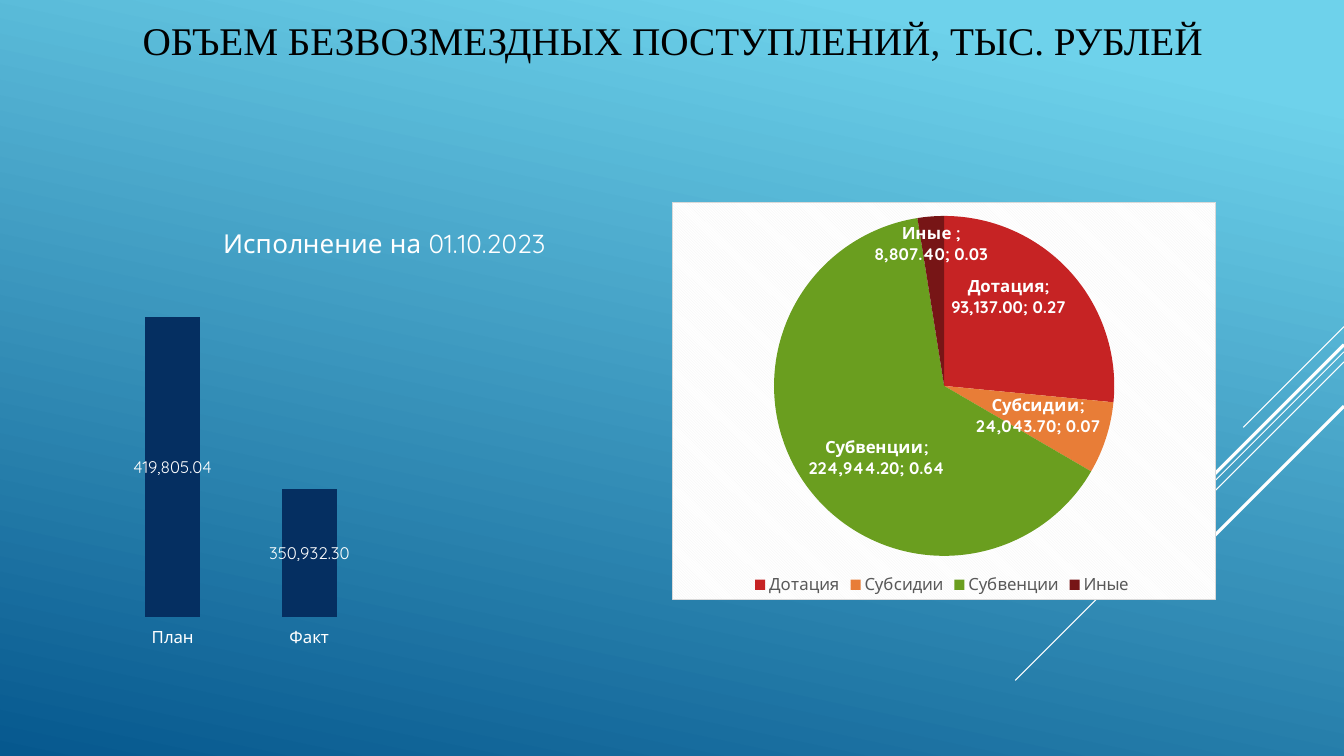
from dataclasses import dataclass

from pptx import Presentation
from pptx.chart.data import CategoryChartData
from pptx.dml.color import RGBColor
from pptx.enum.chart import XL_CHART_TYPE, XL_LABEL_POSITION, XL_LEGEND_POSITION, XL_TICK_MARK
from pptx.enum.shapes import MSO_CONNECTOR
from pptx.enum.text import MSO_ANCHOR, PP_ALIGN
from pptx.oxml import parse_xml
from pptx.oxml.ns import nsdecls, qn
from pptx.util import Inches, Pt

PIE, COLUMN = XL_CHART_TYPE.PIE, XL_CHART_TYPE.COLUMN_STACKED
INSIDE_END, LEGEND_BOTTOM = XL_LABEL_POSITION.INSIDE_END, XL_LEGEND_POSITION.BOTTOM
TICK_NONE, TICK_OUTSIDE = XL_TICK_MARK.NONE, XL_TICK_MARK.OUTSIDE
STRAIGHT, MIDDLE, CENTER = MSO_CONNECTOR.STRAIGHT, MSO_ANCHOR.MIDDLE, PP_ALIGN.CENTER


@dataclass(frozen=True)
class Theme:
    heading_font: str = "Times New Roman"
    body_font: str = "Quicksand"
    heading_size: float = 28
    chart_title_size: float = 18.6
    label_size: float = 12
    black: str = "000000"
    white: str = "FFFFFF"
    grey: str = "595959"
    border: str = "D9D9D9"
    hatch: str = "F2F2F2"
    sky: str = "6ED2EB"
    deep: str = "06588E"
    navy: str = "052F61"
    slices: tuple = ("C62324", "E87D37", "6A9E1F", "771516")


THEME = Theme()
WIDTH, HEIGHT = 13.33, 7.5
MARGIN, CHART_TOP = 0.92, 2
NUMBER_FORMAT = "#,##0.00"

# Diagonals start at the right edge: start height, length along x, width
DIAGONALS = ((3.24, 1, 0.75), (3.49, 3.26, 0.75), (3.59, 2.07, 0.75),
             (3.42, 1.91, 2.25), (4.03, 1.39, 2.25))


def style_font(font, size, color=THEME.white, name=THEME.body_font, bold=False):
    font.size, font.name, font.bold = Pt(size), name, bold
    font.color.rgb = RGBColor.from_string(color)


def paint_background(slide):
    fill = slide.background.fill
    fill.gradient()
    fill.gradient_angle = 360 - 102
    stops = zip(fill.gradient_stops, (THEME.sky, THEME.deep), (0.1, 1))
    for stop, color, position in stops:
        stop.color.rgb = RGBColor.from_string(color)
        stop.position = position


def add_diagonal(slide, top, length, width):
    line = slide.shapes.add_connector(
        STRAIGHT, Inches(WIDTH), Inches(top), Inches(WIDTH - length), Inches(top + length))
    line.line.color.rgb = RGBColor.from_string(THEME.white)
    line.line.width = Pt(width)
    line._element.spPr.append(parse_xml(f"<a:effectLst {nsdecls('a')}/>"))


def set_title(slide, text):
    title = slide.shapes.title
    title.left, title.top = Inches(MARGIN), Inches(-0.15)
    title.width, title.height = Inches(11.5), Inches(1.09)
    title.text_frame.vertical_anchor = MIDDLE
    paragraph = title.text_frame.paragraphs[0]
    paragraph.alignment = CENTER
    run = paragraph.add_run()
    run.text = text
    style_font(run.font, THEME.heading_size, THEME.black, THEME.heading_font)


def set_layout(parent, index, target="", **shares):
    """Place a chart part by shares of the chart's size."""
    for old in parent.findall(qn("c:layout")):
        parent.remove(old)
    modes = "".join(f'<c:{axis}Mode val="edge"/>' for axis in "xy")
    values = "".join(f'<c:{key} val="{share}"/>' for key, share in shares.items())
    parent.insert(index, parse_xml(
        f"<c:layout {nsdecls('c')}><c:manualLayout>{target}{modes}{values}"
        "</c:manualLayout></c:layout>"))


def add_chart(slide, kind, box, categories, values, plot_shares, area_fill):
    """Add a one-series chart with value labels and a set plot area."""
    data = CategoryChartData(number_format=NUMBER_FORMAT)
    data.categories = categories
    data.add_series("Series 1", values)
    chart = slide.shapes.add_chart(kind, *map(Inches, box), data).chart
    chart.has_title = chart.has_legend = False
    style_font(chart.font, 10)
    labels = chart.plots[0].series[0].data_labels
    labels.show_value = True
    labels.number_format, labels.number_format_is_linked = NUMBER_FORMAT, False
    style_font(labels.font, THEME.label_size)
    chart_element = chart._chartSpace.chart
    set_layout(chart_element.plotArea, 0, '<c:layoutTarget val="inner"/>', **plot_shares)
    chart_element.addnext(parse_xml(
        f"<c:spPr {nsdecls('c', 'a')}>{area_fill}</c:spPr>"))
    return chart


def add_structure_pie(slide):
    area_fill = (
        f'<a:pattFill prst="dkDnDiag"><a:fgClr><a:srgbClr val="{THEME.hatch}"/></a:fgClr>'
        f'<a:bgClr><a:srgbClr val="{THEME.white}"/></a:bgClr></a:pattFill>'
        f'<a:ln w="9525"><a:solidFill><a:srgbClr val="{THEME.border}"/></a:solidFill></a:ln>')
    chart = add_chart(
        slide, PIE, (WIDTH / 2, CHART_TOP, 5.4, 3.95),
        ("Дотация", "Субсидии", "Субвенции", "Иные "),
        (93137, 24043.7, 224944.2, 8807.4),
        {"x": 0.03, "y": 0.035, "w": 0.94, "h": 0.856}, area_fill)
    series = chart.plots[0].series[0]
    for index, color in enumerate(THEME.slices):
        fill = series.points[index].format.fill
        fill.solid()
        fill.fore_color.rgb = RGBColor.from_string(color)
    labels = series.data_labels
    labels.show_category_name = labels.show_percentage = True
    labels.position = INSIDE_END
    labels.font.bold = True
    labels._element.find(qn("c:showBubbleSize")).addnext(
        parse_xml(f"<c:separator {nsdecls('c')}>; </c:separator>"))
    chart.has_legend = True
    chart.legend.position = LEGEND_BOTTOM
    chart.legend.include_in_layout = False
    style_font(chart.legend.font, THEME.label_size, THEME.grey)


def add_execution_columns(slide):
    chart = add_chart(
        slide, COLUMN, (MARGIN, CHART_TOP, 5.67, 4.52),
        ("План", "Факт", "", ""), (419805.04, 350932.3, None, None),
        {"x": 0.02, "y": 0.143, "w": 0.957, "h": 0.768},
        "<a:noFill/><a:ln><a:noFill/></a:ln>")
    plot = chart.plots[0]
    plot.gap_width, plot.overlap, plot.vary_by_categories = 150, 100, False
    fill = plot.series[0].format.fill
    fill.solid()
    fill.fore_color.rgb = RGBColor.from_string(THEME.navy)

    # Axes
    value_axis, category_axis = chart.value_axis, chart.category_axis
    value_axis.minimum_scale, value_axis.maximum_scale = 300000, 440000
    value_axis.has_major_gridlines = False
    value_axis.visible = False
    category_axis.major_tick_mark = TICK_OUTSIDE
    category_axis.minor_tick_mark = TICK_NONE
    category_axis.format.line.fill.background()
    style_font(category_axis.tick_labels.font, THEME.label_size)

    # Chart title
    chart.has_title = True
    run = chart.chart_title.text_frame.paragraphs[0].add_run()
    run.text = "Исполнение на 01.10.2023"
    style_font(run.font, THEME.chart_title_size)
    chart.chart_title.include_in_layout = False
    set_layout(chart.chart_title._element, 1, x=0.22, y=0.04)


def main():
    presentation = Presentation()
    presentation.slide_width, presentation.slide_height = Inches(WIDTH), Inches(HEIGHT)
    slide = presentation.slides.add_slide(presentation.slide_layouts.get_by_name("Title Only"))
    paint_background(slide)
    for diagonal in DIAGONALS:
        add_diagonal(slide, *diagonal)
    set_title(slide, "ОБЪЕМ БЕЗВОЗМЕЗДНЫХ ПОСТУПЛЕНИЙ, ТЫС. РУБЛЕЙ")
    add_structure_pie(slide)
    add_execution_columns(slide)
    presentation.save("out.pptx")


if __name__ == "__main__":
    main()
